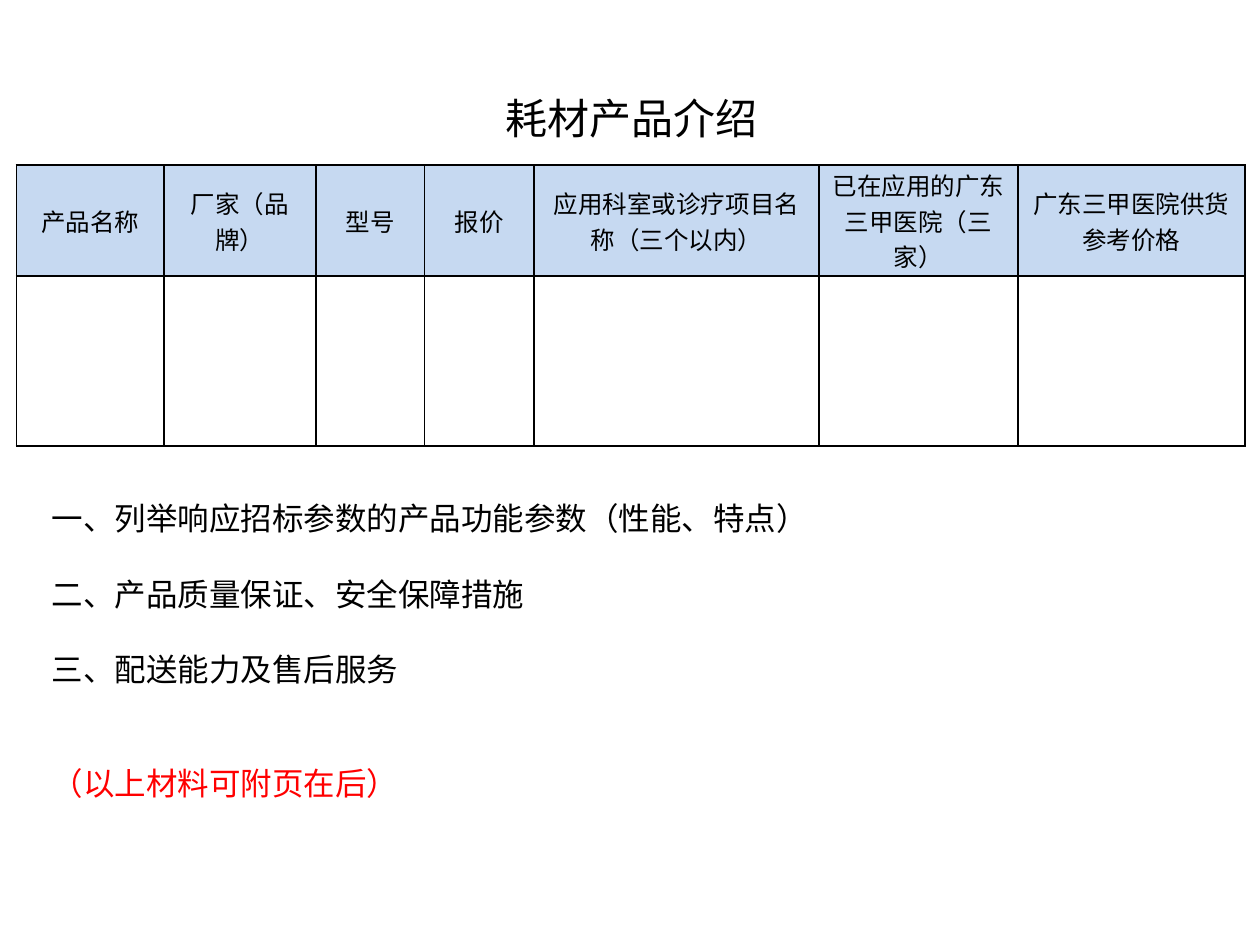
"""Build the consumables product introduction slide with a table and outline."""
import pptx
import pptx.dml.color
import pptx.enum.text
import pptx.oxml
import pptx.util

Pt = pptx.util.Pt
ALIGN = pptx.enum.text.PP_ALIGN
ANCHOR = pptx.enum.text.MSO_ANCHOR
NO_FIT = pptx.enum.text.MSO_AUTO_SIZE.NONE
COLORS = {"text": "000000", "header": "C6D9F1", "note": "FF0000"}
NS = 'xmlns:a="http://schemas.openxmlformats.org/drawingml/2006/main"'
LINE = 21.6


def rgb(name):
    return pptx.dml.color.RGBColor.from_string(COLORS[name])


def style_font(paragraph, face, size, color):
    for run in paragraph.runs:
        run.font.name = face
        run.font.size = Pt(size)
        run.font.color.rgb = rgb(color)


deck = pptx.Presentation()
deck.slide_width, deck.slide_height = Pt(720), Pt(540)
slide = deck.slides.add_slide(deck.slide_layouts[1])

heading = slide.shapes.title
heading.left, heading.top, heading.width, heading.height = Pt(84.2), Pt(49), Pt(553.7), Pt(36)
heading.text_frame.text = "耗材产品介绍"
heading.text_frame.auto_size = NO_FIT
heading.text_frame.paragraphs[0].alignment = ALIGN.CENTER
style_font(heading.text_frame.paragraphs[0], "Arial", 24, "text")

columns = [
    ("产品名称", 84.2),
    ("厂家（品牌）", 87.1),
    ("型号", 62),
    ("报价", 62.6),
    ("应用科室或诊疗项目名称（三个以内）", 162.7),
    ("已在应用的广东三甲医院（三家）", 113.8),
    ("广东三甲医院供货参考价格", 129.6),
]
row_heights = [63.4, 97.2]
products = slide.shapes.add_table(
    len(row_heights), len(columns), Pt(9.4), Pt(94.3),
    Pt(sum(width for _, width in columns)), Pt(sum(row_heights))).table
products.first_row = products.horz_banding = False
for row, height in zip(products.rows, row_heights):
    row.height = Pt(height)
for index, (label, width) in enumerate(columns):
    products.columns[index].width = Pt(width)
    products.cell(0, index).text_frame.text = label

for cell in products.iter_cells():
    cell.vertical_anchor = ANCHOR.MIDDLE
    cell.margin_left = cell.margin_right = Pt(5)
    cell.margin_top = cell.margin_bottom = 0
    cell_label = cell.text_frame.paragraphs[0]
    cell_label.alignment = ALIGN.CENTER
    style_font(cell_label, "Noto Sans CJK SC", 14, "text")
    cell_properties = cell._tc.get_or_add_tcPr()
    for side in ("lnL", "lnR", "lnT", "lnB"):
        cell_properties.append(pptx.oxml.parse_xml(
            f'<a:{side} {NS} w="12700"><a:solidFill><a:srgbClr val="{COLORS["text"]}"/>'
            f'</a:solidFill></a:{side}>'))
    if cell_label.text:
        cell.fill.solid()
        cell.fill.fore_color.rgb = rgb("header")
    else:
        cell.fill.background()

outline = slide.placeholders[1]
outline.left, outline.top, outline.width, outline.height = Pt(22.3), Pt(281.5), Pt(684), Pt(181.4)
outline.text_frame.auto_size = NO_FIT
outline.text_frame.vertical_anchor = ANCHOR.TOP
requirements = [
    ("一、列举响应招标参数的产品功能参数（性能、特点）", 0, "text"),
    ("二、产品质量保证、安全保障措施", LINE, "text"),
    ("三、配送能力及售后服务", LINE, "text"),
    ("（以上材料可附页在后）", 2 * LINE, "note"),
]
outline.text_frame.text = "\n".join(wording for wording, _, _ in requirements)
for item, (_, gap, color) in zip(outline.text_frame.paragraphs, requirements):
    item.space_before = Pt(gap)
    item.line_spacing = Pt(LINE)
    item_properties = item._p.get_or_add_pPr()
    item_properties.set("marL", "0")
    item_properties.set("indent", "0")
    item_properties.append(pptx.oxml.parse_xml(f"<a:buNone {NS}/>"))
    style_font(item, "Calibri", 18, color)

deck.save("out.pptx")
